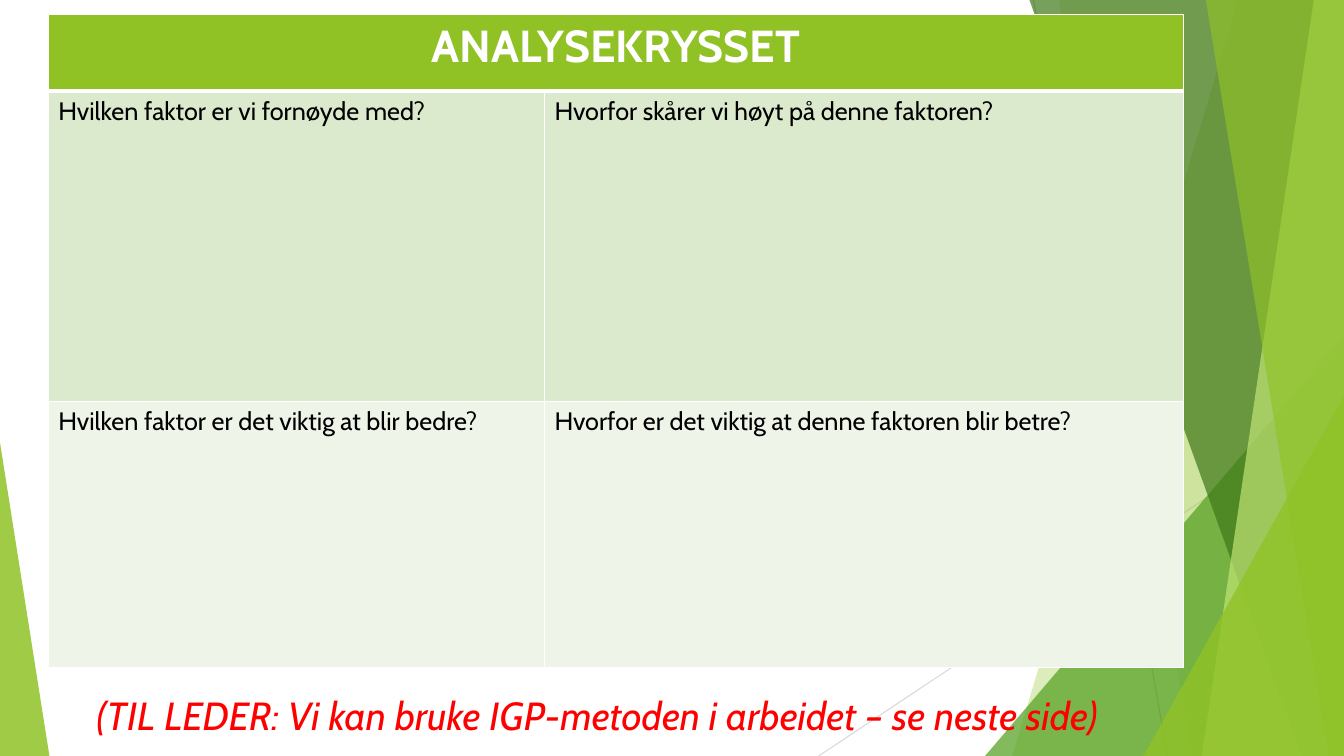
from lxml import etree
from pptx import Presentation
from pptx.dml.color import RGBColor
from pptx.enum.shapes import MSO_CONNECTOR, MSO_SHAPE
from pptx.enum.text import PP_ALIGN
from pptx.oxml.ns import qn
from pptx.util import Inches, Pt

STRAIGHT = MSO_CONNECTOR.STRAIGHT
TRIANGLE = MSO_SHAPE.ISOSCELES_TRIANGLE
CENTER = PP_ALIGN.CENTER
LEFT = PP_ALIGN.LEFT

WIDTH, HEIGHT = 13.33, 7.5
FONT = "Cabin"
BLANK_LAYOUT = 6

WHITE = RGBColor(0xFF, 0xFF, 0xFF)
BLACK = RGBColor(0x00, 0x00, 0x00)
RED = RGBColor(0xFF, 0x00, 0x00)
GRAY = RGBColor(0xBF, 0xBF, 0xBF)
LIGHT_GRAY = RGBColor(0xD9, 0xD9, 0xD9)
LIME = RGBColor(0x90, 0xC2, 0x26)
GREEN = RGBColor(0x54, 0xA0, 0x21)
DARK_GREEN = RGBColor(0x3F, 0x78, 0x19)
PALE_LIME = RGBColor(0xC0, 0xE4, 0x74)
BAND_DARK = RGBColor(0xDB, 0xE9, 0xCD)
BAND_LIGHT = RGBColor(0xEE, 0xF4, 0xE8)

COLUMNS = (4.92, 6.34)
ROWS = (0.76, 3.08, 2.64)
QUESTIONS = (
    (BAND_DARK, "Hvilken faktor er vi fornøyde med?",
     "Hvorfor skårer vi høyt på denne faktoren?"),
    (BAND_LIGHT, "Hvilken faktor er det viktig at blir bedre?",
     "Hvorfor er det viktig at denne faktoren blir betre?"),
)


def paint(shape, color, opacity):
    shape.shadow.inherit = False
    shape.line.fill.background()
    shape.fill.solid()
    shape.fill.fore_color.rgb = color
    color_node = shape.fill._xPr.find(qn("a:solidFill"))[0]
    etree.SubElement(color_node, qn("a:alpha"), val=str(opacity * 1000))


def add_line(page, start, end, color):
    line = page.shapes.add_connector(STRAIGHT, *map(Inches, start + end))
    line.line.color.rgb = color
    line.line.width = Pt(0.75)
    etree.SubElement(line._element.spPr, qn("a:effectLst"))


def add_facet(page, top_x, bottom_x, color, opacity):
    outline = page.shapes.build_freeform(
        Inches(top_x), 0, scale=1.0)
    corners = ((WIDTH, 0), (WIDTH, HEIGHT), (bottom_x, HEIGHT))
    outline.add_line_segments(
        [(Inches(x), Inches(y)) for x, y in corners], close=True)
    paint(outline.convert_to_shape(), color, opacity)


def add_corner(page, left, top, width, apex, color, opacity):
    corner = page.shapes.add_shape(
        TRIANGLE, *map(Inches, (left, top, width, HEIGHT - top)))
    corner.adjustments[0] = apex
    paint(corner, color, opacity)


def add_backdrop(page):
    add_line(page, (10.25, 0), (11.58, HEIGHT), GRAY)
    add_line(page, (WIDTH, 4.03), (8.12, HEIGHT), LIGHT_GRAY)
    add_facet(page, 12.28, 10.04, LIME, 30)
    add_facet(page, 10.5, 11.83, LIME, 20)
    add_corner(page, 9.77, 3.33, 3.56, 1, GREEN, 72)
    add_facet(page, 10.21, 12.91, DARK_GREEN, 70)
    add_facet(page, 13.03, 11.92, PALE_LIME, 70)
    add_facet(page, 11.96, 13.18, LIME, 65)
    add_corner(page, 11.34, 3.93, 1.99, 1, LIME, 80)
    add_corner(page, 0, 4.39, 0.49, 0, LIME, 85)


def write(frame, text, size, color, bold=False, italic=False, align=LEFT):
    para = frame.paragraphs[0]
    para.text = text
    para.alignment = align
    para.font.name = FONT
    para.font.size = Pt(size)
    para.font.bold = bold
    para.font.italic = italic
    para.font.color.rgb = color


def style_cell(cell, fill, top=1, bottom=1):
    properties = cell._tc.get_or_add_tcPr()
    for side, points in (("L", 1), ("R", 1), ("T", top), ("B", bottom)):
        border = etree.SubElement(
            properties, qn(f"a:ln{side}"), w=str(Pt(points)))
        solid = etree.SubElement(border, qn("a:solidFill"))
        etree.SubElement(solid, qn("a:srgbClr"), val=str(WHITE))
    cell.fill.solid()
    cell.fill.fore_color.rgb = fill


def add_analysis_table(page):
    table = page.shapes.add_table(
        len(ROWS), len(COLUMNS), Inches(0.48), Inches(0.14),
        Inches(sum(COLUMNS)), Inches(sum(ROWS))).table
    for column, width in zip(table.columns, COLUMNS):
        column.width = Inches(width)
    for row, height in zip(table.rows, ROWS):
        row.height = Inches(height)

    heading = table.cell(0, 0)
    heading.merge(table.cell(0, 1))
    for cell in table.rows[0].cells:
        style_cell(cell, LIME, bottom=3)
    write(heading.text_frame, "ANALYSEKRYSSET", 32, WHITE,
          bold=True, align=CENTER)

    for row, (fill, *questions) in enumerate(QUESTIONS, start=1):
        for column, question in enumerate(questions):
            cell = table.cell(row, column)
            style_cell(cell, fill, top=3 if row == 1 else 1)
            write(cell.text_frame, question, 18, BLACK)


def add_leader_note(page):
    box = page.shapes.add_textbox(*map(Inches, (0.86, 6.81, 11.61, 0.57)))
    box.text_frame.word_wrap = True
    write(box.text_frame,
          "(TIL LEDER: Vi kan bruke IGP-metoden i arbeidet – se neste side)",
          28, RED, italic=True)


def main():
    deck = Presentation()
    deck.slide_width = Inches(WIDTH)
    deck.slide_height = Inches(HEIGHT)
    page = deck.slides.add_slide(deck.slide_layouts[BLANK_LAYOUT])
    add_backdrop(page)
    add_analysis_table(page)
    add_leader_note(page)
    deck.save("out.pptx")


if __name__ == "__main__":
    main()
